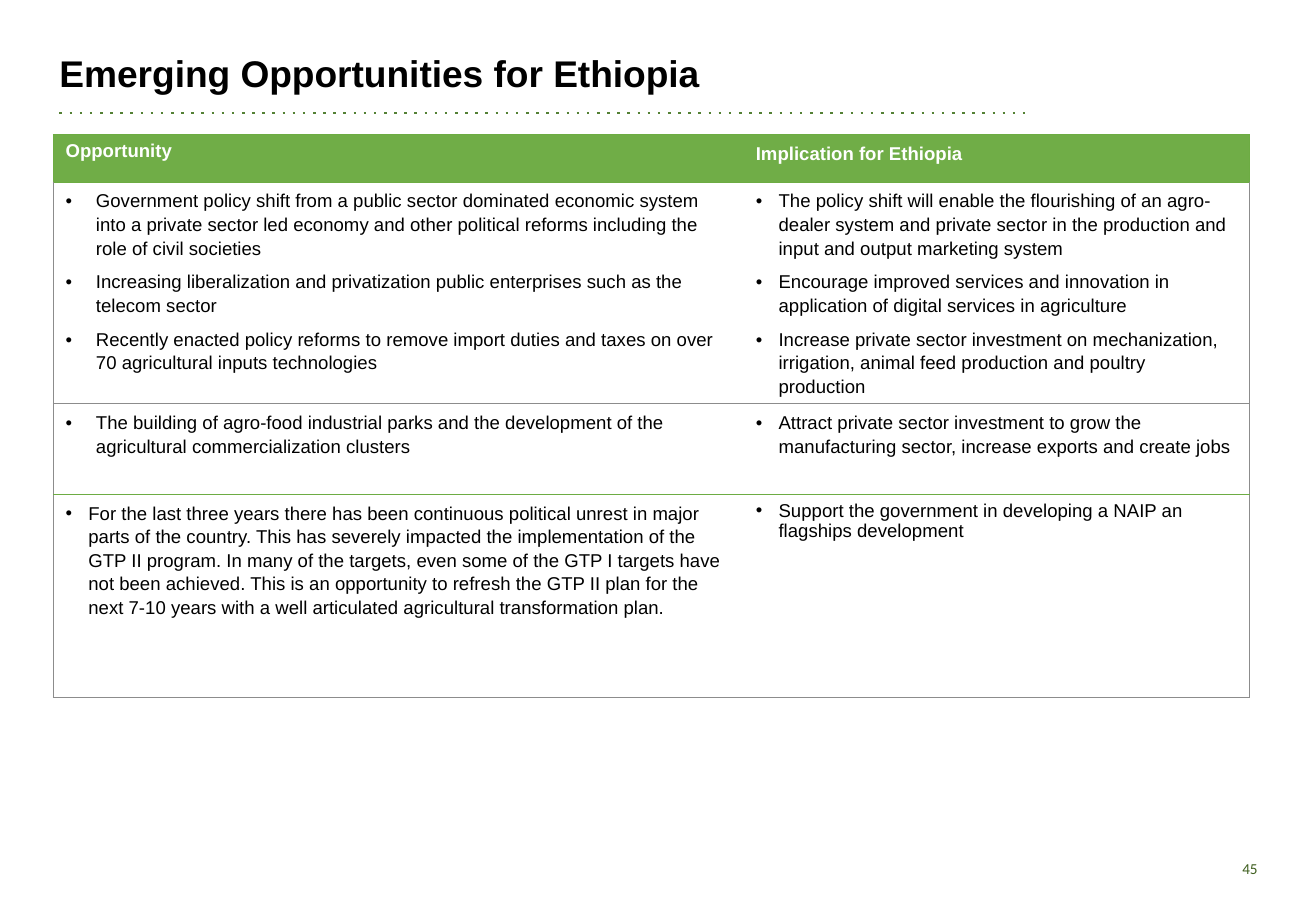
"""Build the slide on emerging opportunities for Ethiopia."""
from dataclasses import dataclass
from typing import Optional

from lxml import etree
from pptx import Presentation
from pptx.dml.color import RGBColor
from pptx.enum.shapes import MSO_CONNECTOR
from pptx.enum.text import MSO_ANCHOR, PP_ALIGN
from pptx.oxml.ns import qn
from pptx.util import Inches, Pt

STRAIGHT = MSO_CONNECTOR.STRAIGHT
TOP, MIDDLE, BOTTOM = MSO_ANCHOR.TOP, MSO_ANCHOR.MIDDLE, MSO_ANCHOR.BOTTOM
LEFT, RIGHT = PP_ALIGN.LEFT, PP_ALIGN.RIGHT
SLIDE_WIDTH, SLIDE_HEIGHT = Inches(10.83), Inches(7.5)
PLAIN_TABLE_STYLE = "{2D5ABB26-0587-4C30-8999-92F81FD0307C}"


@dataclass(frozen=True)
class Theme:
    heading_font: str = "Arial"
    number_font: str = "Calibri"
    title_size: float = 22
    table_size: float = 11
    number_size: float = 9
    ink: str = "000000"
    paper: str = "FFFFFF"
    header: str = "70AD47"
    green: str = "6DAC43"
    grey: str = "8C8C8C"
    rule: str = "548135"
    number: str = "3F5F1F"
    rule_width: float = 1.5
    border_width: float = 0.75


THEME = Theme()


@dataclass(frozen=True)
class TextStyle:
    size: float
    color: str
    font: str = THEME.heading_font
    bold: bool = False


@dataclass(frozen=True)
class Layout:
    spacing: Optional[float] = None
    space_after: Optional[float] = None
    indent: float = 0
    alignment: PP_ALIGN = LEFT


@dataclass(frozen=True)
class Cell:
    paragraphs: tuple[str, ...]
    layout: Layout


@dataclass(frozen=True)
class Row:
    height: float
    cells: tuple[Cell, Cell]
    top: str
    bottom: str
    side: str = THEME.grey
    fill: str = THEME.paper
    style: TextStyle = TextStyle(THEME.table_size, THEME.ink)


@dataclass(frozen=True)
class Label:
    text: str
    box: tuple[float, float, float, float]
    insets: tuple[float, float]
    anchor: MSO_ANCHOR
    style: TextStyle
    layout: Layout


LINE = Pt(14)
WIDE = Layout(LINE, Pt(6), 2.31)
NARROW = Layout(LINE, Pt(6), 1.73)
HEADER_STYLE = TextStyle(THEME.table_size, THEME.paper, bold=True)

LABELS = (
    Label("Emerging Opportunities for Ethiopia", (4.52, 2, 73.13, 8.53), (0, 0), BOTTOM,
          TextStyle(THEME.title_size, THEME.ink, bold=True), Layout(0.9)),
    Label("45", (73.04, 92.67, 23.36, 5.33), (0.09, 0.04), MIDDLE,
          TextStyle(THEME.number_size, THEME.number, THEME.number_font),
          Layout(alignment=RIGHT)),
)
RULE = (4.52, 12.4, 78.39, 12.4)
TABLE_ORIGIN = (4.06, 14.8)
COLUMNS = (52.45, 38.41)
ROWS = (
    Row(5.2, (
        Cell(("Opportunity",), Layout()),
        Cell(("Implication for Ethiopia",), Layout(LINE, Pt(6))),
    ), THEME.green, THEME.green, THEME.green, THEME.header, HEADER_STYLE),
    Row(18.93, (
        Cell((
            "Government policy shift from a public sector dominated economic system into a "
            "private sector led economy and other political reforms including the role of "
            "civil societies",
            "Increasing liberalization and privatization public enterprises such as the "
            "telecom sector",
            "Recently enacted policy reforms to remove import duties and taxes on over 70 "
            "agricultural inputs technologies",
        ), WIDE),
        Cell((
            "The policy shift will enable the flourishing of an agro-dealer system and "
            "private sector in the production and input and output marketing system",
            "Encourage improved services and innovation in application of digital services "
            "in agriculture",
            "Increase private sector investment on mechanization, irrigation, animal feed "
            "production and poultry production",
        ), NARROW),
    ), THEME.green, THEME.grey),
    Row(9.95, (
        Cell(("The building of agro-food industrial parks and the development of the "
              "agricultural commercialization clusters",), WIDE),
        Cell(("Attract private sector investment to grow the manufacturing sector, "
              "increase exports and create jobs",), NARROW),
    ), THEME.grey, THEME.green),
    Row(22.27, (
        Cell(("For the last three years there has been continuous political unrest in major "
              "parts of the country. This has severely impacted the implementation of the "
              "GTP II program. In many of the targets, even some of the GTP I targets have "
              "not been achieved. This is an opportunity to refresh the GTP II plan for the "
              "next 7-10 years with a well articulated agricultural transformation plan.",),
             NARROW),
        Cell(("Support the government in developing a NAIP an flagships development",),
             Layout(indent=1.73)),
    ), THEME.green, THEME.grey),
)


def across(percent: float) -> int:
    """Turn a percentage of the slide width into a length."""
    return round(SLIDE_WIDTH * percent / 100)


def down(percent: float) -> int:
    """Turn a percentage of the slide height into a length."""
    return round(SLIDE_HEIGHT * percent / 100)


def place(box: tuple[float, float, float, float]) -> tuple[int, int, int, int]:
    """Turn four percentages into slide lengths."""
    return across(box[0]), down(box[1]), across(box[2]), down(box[3])


def assign(target: object, values: dict) -> None:
    """Set each format value on the target."""
    for name, value in values.items():
        setattr(target, name, value)


def add_color(parent, color: str) -> None:
    """Append an RGB colour element."""
    etree.SubElement(parent, qn("a:srgbClr"), val=color)


def write(frame, texts: tuple[str, ...], style: TextStyle, layout: Layout) -> None:
    """Fill a text frame with one formatted paragraph per text."""
    for index, text in enumerate(texts):
        paragraph = frame.add_paragraph() if index else frame.paragraphs[0]
        assign(paragraph, {"alignment": layout.alignment, "line_spacing": layout.spacing,
                           "space_after": layout.space_after})
        if layout.indent:
            properties = paragraph._p.get_or_add_pPr()
            properties.set("marL", str(across(layout.indent)))
            properties.set("indent", str(-across(layout.indent)))
            add_color(etree.SubElement(properties, qn("a:buClr")), THEME.ink)
            etree.SubElement(properties, qn("a:buFont"), typeface=THEME.heading_font)
            etree.SubElement(properties, qn("a:buChar"), char="•")
        run = paragraph.add_run()
        run.text = text
        assign(run.font, {"name": style.font, "size": Pt(style.size), "bold": style.bold})
        run.font.color.rgb = RGBColor.from_string(style.color)


def add_label(slide, label: Label) -> None:
    """Add a text box."""
    frame = slide.shapes.add_textbox(*place(label.box)).text_frame
    side, edge = map(Inches, label.insets)
    assign(frame, {"word_wrap": True, "vertical_anchor": label.anchor, "margin_left": side,
                   "margin_right": side, "margin_top": edge, "margin_bottom": edge})
    write(frame, (label.text,), label.style, label.layout)


def add_rule(slide) -> None:
    """Add the dotted line under the title."""
    rule = slide.shapes.add_connector(STRAIGHT, *place(RULE))
    rule.line.color.rgb = RGBColor.from_string(THEME.rule)
    rule.line.width = Pt(THEME.rule_width)
    properties = rule._element.spPr
    etree.SubElement(properties.find(qn("a:ln")), qn("a:prstDash"), val="dot")
    etree.SubElement(properties, qn("a:effectLst"))


def add_borders(cell, borders: dict[str, str]) -> None:
    """Draw the given cell sides, listed in schema order."""
    properties = cell._tc.get_or_add_tcPr()
    for index, (side, color) in enumerate(borders.items()):
        border = etree.Element(qn(f"a:{side}"), w=str(Pt(THEME.border_width)))
        add_color(etree.SubElement(border, qn("a:solidFill")), color)
        properties.insert(index, border)


def add_opportunity_table(slide) -> None:
    """Add the table of opportunities and implications."""
    size = (sum(COLUMNS), sum(row.height for row in ROWS))
    table = slide.shapes.add_table(len(ROWS), len(COLUMNS), *place(TABLE_ORIGIN + size)).table
    assign(table, {"first_row": False, "horz_banding": False})
    table._tbl.tblPr.find(qn("a:tableStyleId")).text = PLAIN_TABLE_STYLE
    for column, width in zip(table.columns, COLUMNS):
        column.width = across(width)
    for table_row, row in zip(table.rows, ROWS):
        table_row.height = down(row.height)
        for cell, content, side in zip(table_row.cells, row.cells, ("lnL", "lnR")):
            cell.fill.solid()
            cell.fill.fore_color.rgb = RGBColor.from_string(row.fill)
            cell.vertical_anchor = TOP
            add_borders(cell, {side: row.side, "lnT": row.top, "lnB": row.bottom})
            write(cell.text_frame, content.paragraphs, row.style, content.layout)


def main() -> None:
    """Build and save the presentation."""
    presentation = Presentation()
    assign(presentation, {"slide_width": SLIDE_WIDTH, "slide_height": SLIDE_HEIGHT})
    slide = presentation.slides.add_slide(presentation.slide_layouts[6])
    add_rule(slide)
    for label in LABELS:
        add_label(slide, label)
    add_opportunity_table(slide)
    presentation.save("out.pptx")


if __name__ == "__main__":
    main()
